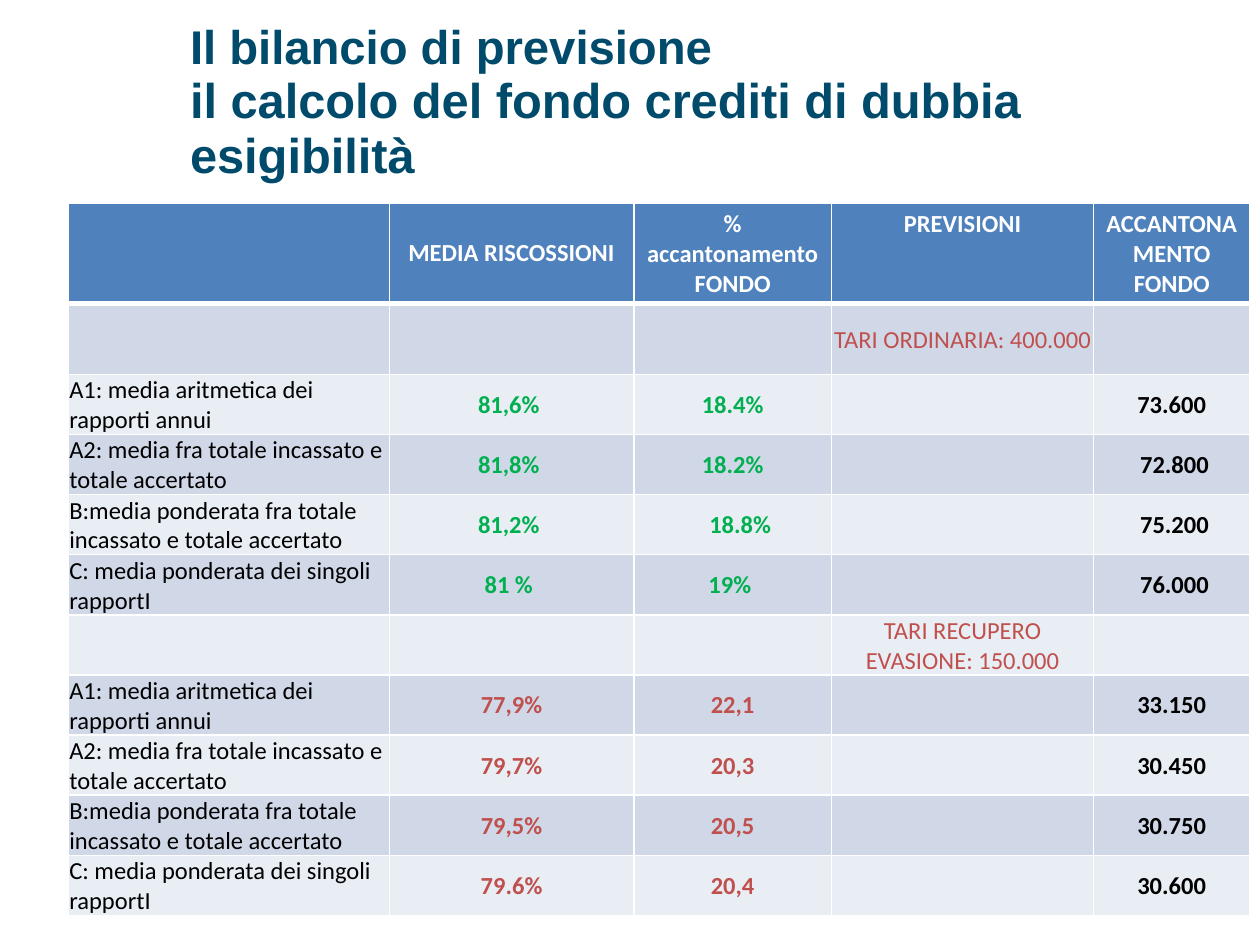
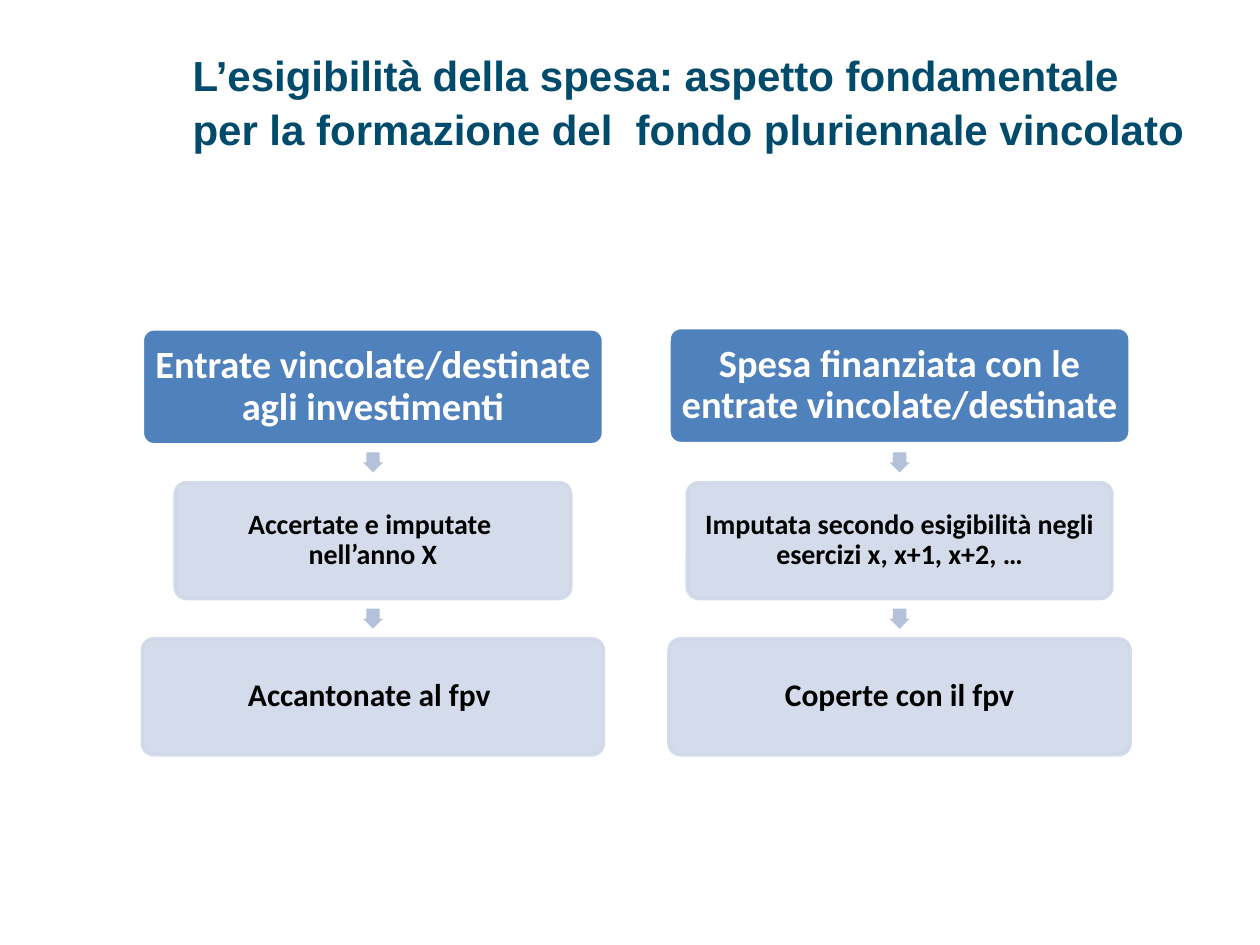
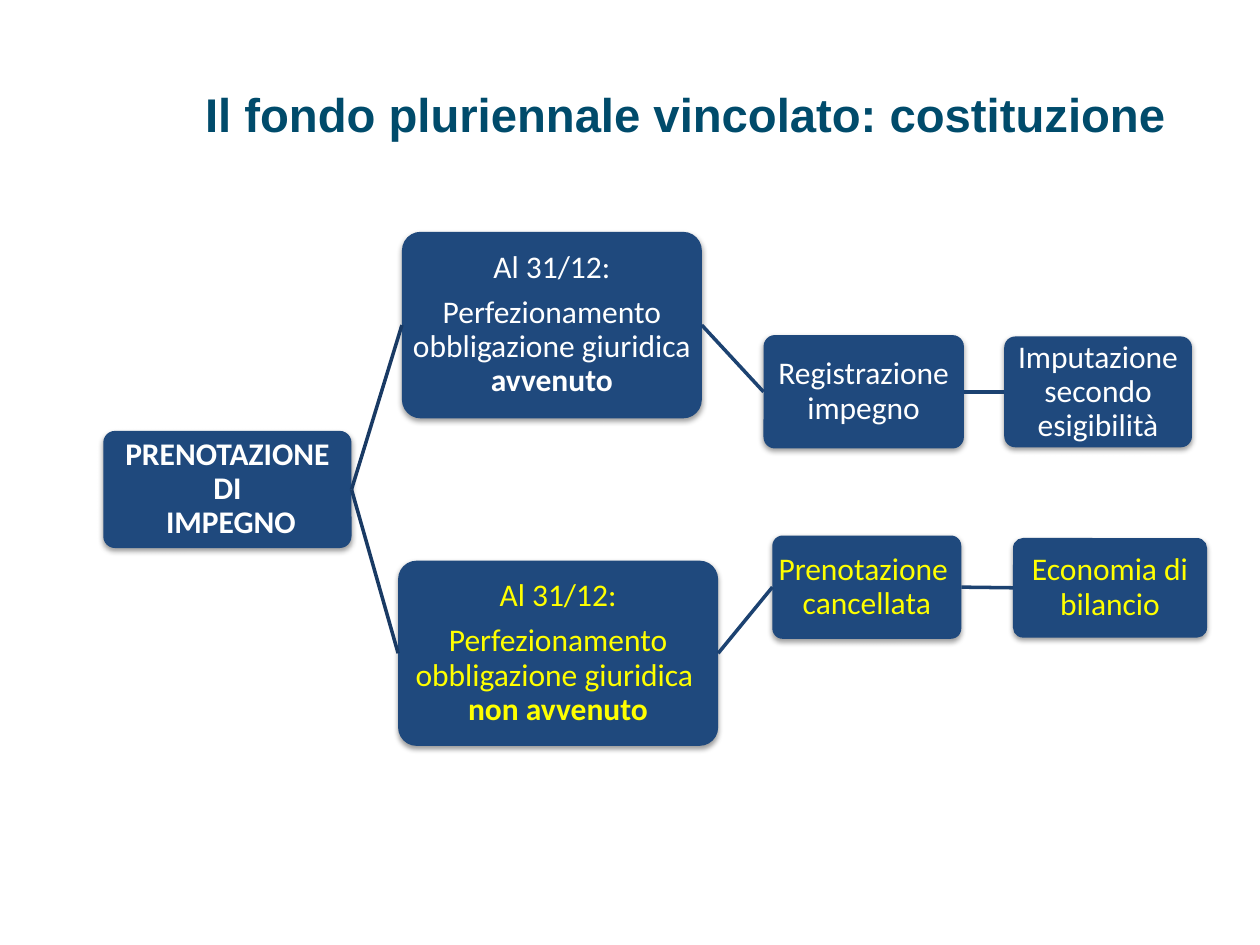
import dataclasses

import lxml.etree
import pptx
import pptx.dml.color
import pptx.enum.shapes
import pptx.enum.text
import pptx.oxml
import pptx.oxml.ns
import pptx.util

Inches = pptx.util.Inches
Pt = pptx.util.Pt
Shapes = pptx.enum.shapes.MSO_SHAPE
CENTER = pptx.enum.text.PP_ALIGN.CENTER
MIDDLE = pptx.enum.text.MSO_ANCHOR.MIDDLE
qn = pptx.oxml.ns.qn


@dataclasses.dataclass(frozen=True)
class Theme:
    title_font: str = "Arial"
    body_font: str = "Calibri"
    title: str = "004B6B"
    white: str = "FFFFFF"
    black: str = "000000"
    blue: str = "4F81BD"
    navy: str = "1F497D"
    band_dark: str = "D0D8E8"
    band_light: str = "E9EDF4"
    arrow: str = "B3C1DB"
    red: str = "C0504D"
    green: str = "00B050"
    yellow: str = "FFFF00"
    branch_line: str = "193A64"
    step_line: str = "1C4271"
    title_size: float = 27
    table_size: float = 14
    head_size: float = 22
    step_size: float = 16
    box_size: float = 18


THEME = Theme()


# Text and colour helpers
def rgb(code):
    return pptx.dml.color.RGBColor.from_string(code)


def style_font(font, name, size, color, bold=False):
    font.name, font.size, font.bold = name, Pt(size), bold
    font.color.rgb = rgb(color)


def set_margins(target, left, top, right, bottom):
    target.margin_left, target.margin_top = Inches(left), Inches(top)
    target.margin_right, target.margin_bottom = Inches(right), Inches(bottom)


def add_alpha(properties, percent):
    for color in properties.iter(qn("a:srgbClr")):
        lxml.etree.SubElement(color, qn("a:alpha"), val=str(percent * 1000))


def add_title(page, area, text, size=THEME.title_size, tail="", tail_size=None):
    box = page.shapes.add_textbox(*map(Inches, area))
    box.text_frame.word_wrap = True
    para = box.text_frame.paragraphs[0]
    para.text = text
    para.line_spacing = Pt(31)
    style_font(para.font, THEME.title_font, size, THEME.title, True)
    if tail:
        span = para.add_run()
        span.text = tail
        span.font.size = Pt(tail_size)


# Diagram elements
def add_shape(page, kind, area, fill, adjustments):
    shape = page.shapes.add_shape(kind, *map(Inches, area))
    shape.shadow.inherit = False
    shape.fill.solid()
    shape.fill.fore_color.rgb = rgb(fill)
    shape.line.fill.background()
    for index, value in enumerate(adjustments):
        shape.adjustments[index] = value
    return shape


def add_box(page, area, fill, paragraphs, size, color, bold=False, margin=0.01, tail=""):
    """Rounded box; the tail is a bold ending of the last paragraph."""
    box = add_shape(page, Shapes.ROUNDED_RECTANGLE, area, fill, [0.1])
    frame = box.text_frame
    frame.word_wrap = True
    frame.vertical_anchor = MIDDLE
    set_margins(frame, *[margin] * 4)
    for index, text in enumerate(paragraphs):
        para = frame.add_paragraph() if index else frame.paragraphs[0]
        para.text = text
        para.alignment = CENTER
        para.line_spacing = 0.9
        para.space_after = Pt(0.35 * size)
        style_font(para.font, THEME.body_font, size, color, bold)
    if tail:
        span = para.add_run()
        span.text = tail
        span.font.bold = True
    return box


def outline(box, color):
    box.line.color.rgb = rgb(color)
    box.line.width = Pt(2)


def add_shadow(box):
    effects = box._element.spPr.find(qn("a:effectLst"))
    shadow = lxml.etree.SubElement(
        effects, qn("a:outerShdw"), blurRad="40000", dist="20000", dir="5400000", rotWithShape="0")
    color = lxml.etree.SubElement(shadow, qn("a:srgbClr"), val=THEME.black)
    lxml.etree.SubElement(color, qn("a:alpha"), val="38000")


def add_down_arrow(page, center, top):
    side = 0.16
    arrow = add_shape(page, Shapes.RIGHT_ARROW, (center - side / 2, top, side, side),
                      THEME.arrow, [0.667, 0.5])
    arrow.rotation = 90


def join(page, source, target, color):
    line = page.shapes.add_connector(pptx.enum.shapes.MSO_CONNECTOR.STRAIGHT, 0, 0, 0, 0)
    line.begin_connect(source, 3)
    line.end_connect(target, 1)
    line.line.color.rgb = rgb(color)
    line.line.width = Pt(2)
    lxml.etree.SubElement(line._element.spPr, qn("a:effectLst"))


# Table elements
def set_borders(cell, top, bottom):
    properties = cell._tc.get_or_add_tcPr()
    for side, width in (("L", 1), ("R", 1), ("T", top), ("B", bottom)):
        line = lxml.etree.SubElement(properties, qn(f"a:ln{side}"), w=str(Pt(width)))
        fill = lxml.etree.SubElement(line, qn("a:solidFill"))
        lxml.etree.SubElement(fill, qn("a:srgbClr"), val=THEME.white)


def write_cell(cell, text, color, bold, centered=True):
    para = cell.text_frame.paragraphs[0]
    para.text = text
    if centered:
        para.alignment = CENTER
    style_font(para.font, THEME.body_font, THEME.table_size, color, bold)


def build_fund_table(page):
    headers = ["", "MEDIA RISCOSSIONI", "% accantonamento FONDO", "PREVISIONI",
               "ACCANTONAMENTO FONDO"]
    methods = ["A1: media aritmetica dei rapporti annui",
               "A2: media fra totale incassato e totale accertato",
               "B:media ponderata fra totale incassato e totale accertato",
               "C: media ponderata dei singoli rapportI"]
    # Forecast, colour of the rates, then collection, share and fund by method
    groups = [
        ("TARI ORDINARIA: 400.000", THEME.green,
         [("81,6% ", "18.4%", "73.600"), ("81,8% ", "18.2%", " 72.800"),
          ("81,2% ", "18.8%", " 75.200"), ("81 % ", "19% ", " 76.000")]),
        ("TARI RECUPERO EVASIONE: 150.000", THEME.red,
         [("77,9%", "22,1", "33.150"), ("79,7%", "20,3", "30.450"),
          ("79,5%", "20,5", "30.750"), ("79.6%", "20,4", "30.600")]),
    ]
    widths = [2.55, 1.94, 1.57, 2.08, 1.24]
    heights = [0.36, 0.56, 0.39] + [0.41] * 8
    grid = page.shapes.add_table(len(heights), len(widths), Inches(0.54), Inches(1.61),
                                 Inches(sum(widths)), Inches(sum(heights))).table
    grid.first_row = grid.horz_banding = False
    for column, width in zip(grid.columns, widths):
        column.width = Inches(width)

    for index, height in enumerate(heights):
        grid.rows[index].height = Inches(height)
        band = THEME.band_dark if index % 2 else THEME.band_light
        for cell in grid.rows[index].cells:
            set_borders(cell, 3 if index == 1 else 1, 3 if index == 0 else 1)
            cell.fill.solid()
            cell.fill.fore_color.rgb = rgb(band if index else THEME.blue)

    for column, text in enumerate(headers):
        if text:
            write_cell(grid.cell(0, column), text, THEME.white, True)
    grid.cell(0, 1).vertical_anchor = MIDDLE

    def fill_cell(row, column, *content):
        cell = grid.cell(row, column)
        set_margins(cell, 0.01, 0.01, 0.01, 0)
        cell.vertical_anchor = MIDDLE
        write_cell(cell, *content)

    for number, (forecast, color, values) in enumerate(groups):
        first = 1 + number * (len(methods) + 1)
        fill_cell(first, 3, forecast, THEME.red, False)
        for row, (method, (collected, share, fund)) in enumerate(zip(methods, values), first + 1):
            fill_cell(row, 0, method, THEME.black, False, False)
            fill_cell(row, 1, collected, color, True)
            fill_cell(row, 2, share, color, True)
            fill_cell(row, 4, fund, THEME.black, True)
    # The 18.8% share sits slightly right of centre
    grid.cell(4, 2).margin_left = Inches(0.13)


# Slides
def build_doubtful_credits(page):
    add_title(page, (1.41, 0.11, 8.59, 1.05), "Il bilancio di previsione\v",
              tail="il calcolo del fondo crediti di dubbia esigibilità", tail_size=27.9)
    build_fund_table(page)


def build_due_spending(page):
    add_title(page, (1.43, 0.31, 8.1, 0.94),
              "L’esigibilità della spesa: aspetto fondamentale per la formazione del  "
              "fondo pluriennale vincolato", 24)
    # Centre, top of the head, width of the middle step, texts
    columns = [
        (2.96, 2.61, 3.14, "Entrate vincolate/destinate agli investimenti",
         "Accertate e imputate \vnell’anno X", "Accantonate al fpv "),
        (7.14, 2.6, 3.37, "Spesa finanziata con le entrate vincolate/destinate",
         "Imputata secondo esigibilità negli esercizi x, x+1, x+2, …", "Coperte con il fpv"),
    ]
    width, height = 3.66, 0.92
    for center, head_top, step_width, head, step, result in columns:
        box = add_box(page, (center - width / 2, head_top, width, height), THEME.blue,
                      [head], THEME.head_size, THEME.white, True, 0.03)
        outline(box, THEME.white)
        steps = [(3.83, step_width, step, THEME.step_size, 0.02),
                 (5.07, width, result, THEME.box_size, 0.03)]
        for top, box_width, text, size, margin in steps:
            add_down_arrow(page, center, top - 0.24)
            box = add_box(page, (center - box_width / 2, top, box_width, height),
                          THEME.band_dark, [text], size, THEME.black, True, margin)
            outline(box, THEME.band_dark)
            add_alpha(box._element.spPr, 90)


def build_fund_creation(page):
    add_title(page, (1.53, 0.65, 7.84, 0.96), "Il fondo pluriennale vincolato: costituzione")

    def add_node(area, paragraphs, color, **options):
        node = add_box(page, area, THEME.navy, paragraphs, THEME.box_size, color, **options)
        add_shadow(node)
        return node

    booking = add_node((0.82, 3.42, 1.97, 0.93), ["PRENOTAZIONE DI\v IMPEGNO"],
                       THEME.white, bold=True)
    # Colour, outcome (area, text, bold tail), then the following steps
    branches = [
        (THEME.white,
         ((3.19, 1.84, 2.38, 1.48), "Perfezionamento obbligazione giuridica ", "avvenuto"),
         [((6.06, 2.66, 1.59, 0.9), "Registrazione impegno"),
          ((7.97, 2.67, 1.49, 0.88), "Imputazione secondo esigibilità")]),
        (THEME.yellow,
         ((3.16, 4.45, 2.54, 1.47), "Perfezionamento obbligazione giuridica \v", "non avvenuto"),
         [((6.13, 4.25, 1.5, 0.82), "Prenotazione  cancellata"),
          ((8.04, 4.27, 1.54, 0.79), "Economia di bilancio")]),
    ]
    for color, (area, text, tail), steps in branches:
        previous = add_node(area, ["Al 31/12:", text], color, tail=tail)
        join(page, booking, previous, THEME.branch_line)
        for step_area, step_text in steps:
            step = add_node(step_area, [step_text], color)
            join(page, previous, step, THEME.step_line)
            previous = step


def main():
    deck = pptx.Presentation()
    deck.slide_width, deck.slide_height = Inches(10), Inches(7.5)
    for build in (build_doubtful_credits, build_due_spending, build_fund_creation):
        build(deck.slides.add_slide(deck.slide_layouts[6]))
    deck.save("out.pptx")


if __name__ == "__main__":
    main()
